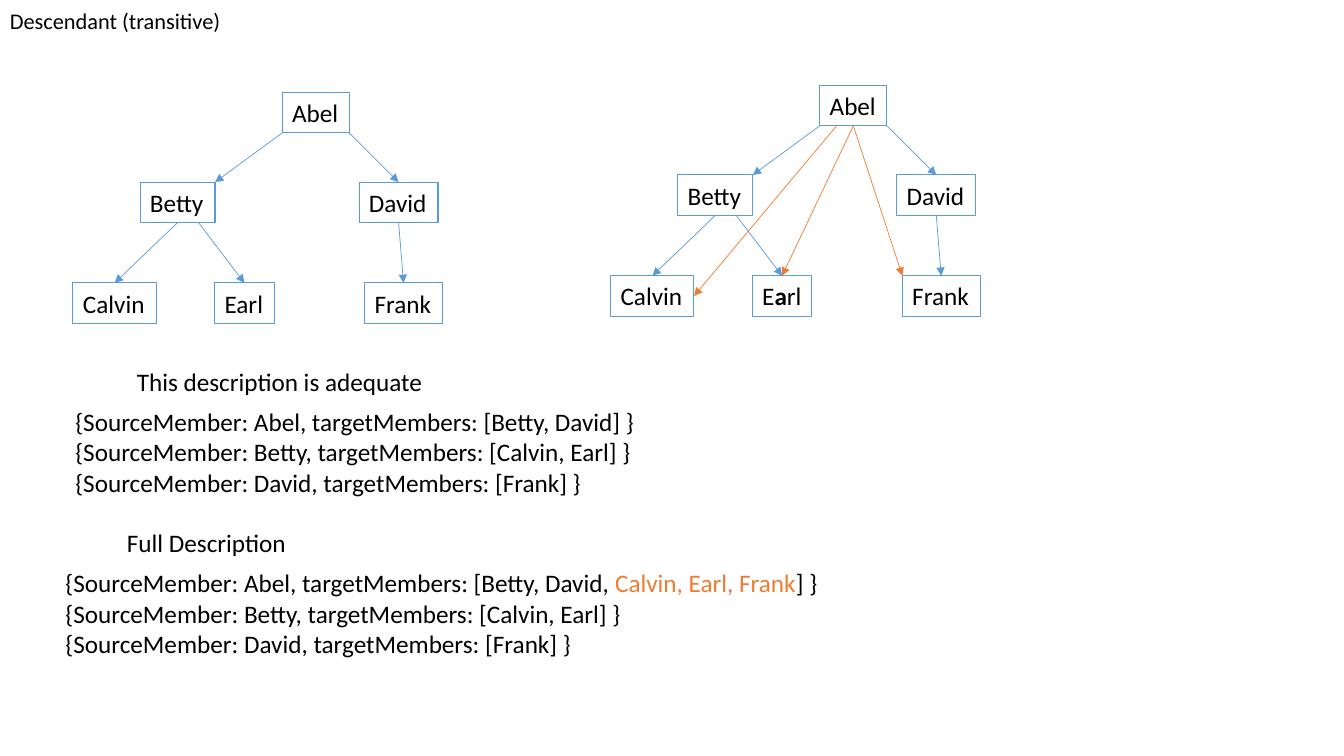
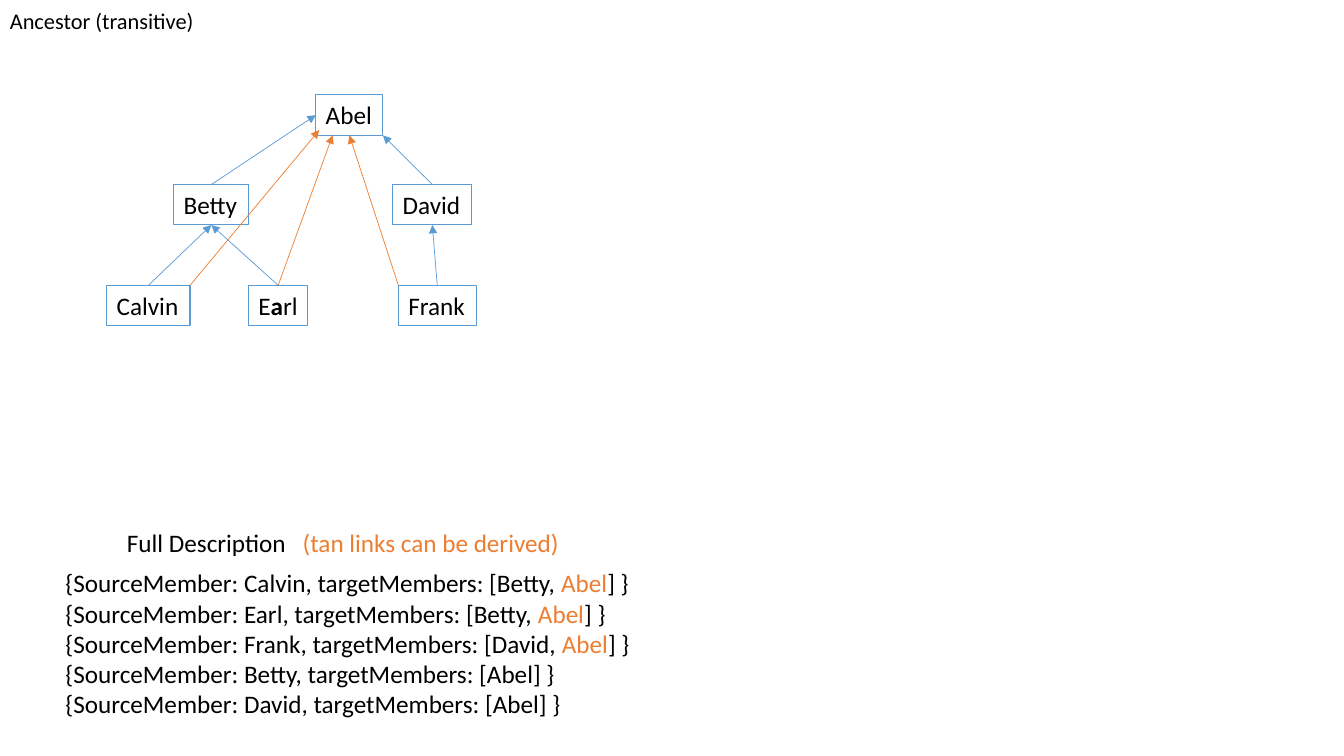
"""Build two slides that compare descendant and ancestor links in a family tree."""
from dataclasses import dataclass

from lxml import etree
from pptx import Presentation
from pptx import util as u
from pptx.dml.color import RGBColor
from pptx.enum import shapes, text
from pptx.oxml.ns import qn


@dataclass(frozen=True)
class Theme:
    font: str = "Calibri"
    ink: RGBColor = RGBColor(0x00, 0x00, 0x00)
    direct: RGBColor = RGBColor(0x5B, 0x9B, 0xD5)
    derived: RGBColor = RGBColor(0xED, 0x7D, 0x31)
    title_size: int = 16
    body_size: int = 18
    border: float = 0.75
    link: float = 0.5


TOP, LEFT, BOTTOM, RIGHT = (0.5, 0), (0, 0.5), (0.5, 1), (1, 0.5)
TOP_LEFT, TOP_RIGHT, BOTTOM_LEFT, BOTTOM_RIGHT = (0, 0), (1, 0), (0, 1), (1, 1)
SITES = {TOP: 0, LEFT: 1, BOTTOM: 2, RIGHT: 3}

ROW_HEIGHT = 1.02
LINE_HEIGHT = 0.76
PARENTS, CHILDREN = 2.26, 4.8
FAMILY = {
    "Abel": (5.27, 0, 1.69),
    "Betty": (1.69, PARENTS, 1.89),
    "Calvin": (0, CHILDREN, 2.1),
    "David": (7.21, PARENTS, 1.99),
    "Earl": (3.57, CHILDREN, 1.5),
    "Frank": (7.35, CHILDREN, 1.96),
}
BOLD_EARL = {"Earl": ("E", "a", "rl")}

DESCENDANT_LINKS = [
    ("Abel", BOTTOM_LEFT, "Betty", TOP_RIGHT),
    ("Abel", BOTTOM_RIGHT, "David", TOP),
    ("Betty", BOTTOM, "Calvin", TOP),
    ("Betty", (0.78, 1), "Earl", TOP),
    ("David", BOTTOM, "Frank", TOP),
]
DERIVED_DESCENDANTS = [
    ("Abel", (0.25, 1), "Calvin", RIGHT),
    ("Abel", BOTTOM, "Earl", TOP),
    ("Abel", BOTTOM, "Frank", TOP_LEFT),
]
ANCESTOR_LINKS = [
    ("Calvin", TOP, "Betty", BOTTOM),
    ("Earl", TOP, "Betty", BOTTOM),
    ("Frank", TOP, "David", BOTTOM),
    ("David", TOP, "Abel", BOTTOM_RIGHT),
    ("Betty", TOP, "Abel", LEFT),
]
DERIVED_ANCESTORS = [
    ("Calvin", TOP_RIGHT, "Abel", (0.05, 0.87)),
    ("Earl", TOP, "Abel", (0.25, 1)),
    ("Frank", TOP_LEFT, "Abel", BOTTOM),
]

LOWER_GENERATION = [("Betty", "Calvin, Earl"), ("David", "Frank")]
ADEQUATE = [("Abel", "Betty, David"), *LOWER_GENERATION]
FULL_DESCENDANTS = [("Abel", "Betty, David", "Calvin, Earl, Frank"), *LOWER_GENERATION]
FULL_ANCESTORS = [
    ("Calvin", "Betty", "Abel"),
    ("Earl", "Betty", "Abel"),
    ("Frank", "David", "Abel"),
    ("Betty", "Abel"),
    ("David", "Abel"),
]


def record(source, direct, derived=None):
    opening = f"{{SourceMember: {source}, targetMembers: [{direct}"
    return (f"{opening}, ", derived, "] }") if derived else (f"{opening}] }}",)


class Deck:
    def __init__(self, theme):
        self.theme = theme
        self.prs = Presentation()
        self.prs.slide_width, self.prs.slide_height = u.Cm(33.87), u.Cm(19.05)
        self.slide = None

    def add_slide(self, title):
        self.slide = self.prs.slides.add_slide(self.prs.slide_layouts[6])
        frame = self.slide.shapes.add_textbox(0, 0, u.Cm(29.21), u.Cm(1.12)).text_frame
        self.set_lines(frame, [(title,)], size=self.theme.title_size)
        frame.word_wrap = True
        frame.auto_size = text.MSO_AUTO_SIZE.NONE
        frame.vertical_anchor = text.MSO_ANCHOR.MIDDLE
        frame.paragraphs[0].line_spacing = 0.9

    def set_lines(self, frame, lines, size=None, color=None, accent=None, bold_accent=False):
        frame.word_wrap = False
        frame.auto_size = text.MSO_AUTO_SIZE.SHAPE_TO_FIT_TEXT
        frame.vertical_anchor = text.MSO_ANCHOR.TOP
        color = color or self.theme.ink
        for row, pieces in enumerate(lines):
            paragraph = frame.add_paragraph() if row else frame.paragraphs[0]
            paragraph.alignment = text.PP_ALIGN.LEFT
            paragraph.text = pieces[0]
            for piece in pieces[1:]:
                paragraph.add_run().text = piece
            for index, run in enumerate(paragraph.runs):
                accented = index % 2 == 1
                run.font.name = self.theme.font
                run.font.size = u.Pt(size or self.theme.body_size)
                run.font.bold = accented and bold_accent
                run.font.color.rgb = accent if accented and accent else color

    def label(self, left, top, width, lines, **style):
        height = LINE_HEIGHT * len(lines) + 0.26
        box = self.slide.shapes.add_textbox(u.Cm(left), u.Cm(top), u.Cm(width), u.Cm(height))
        self.set_lines(box.text_frame, lines, **style)

    def person(self, left, top, width, pieces):
        box = self.slide.shapes.add_shape(
            shapes.MSO_SHAPE.RECTANGLE, u.Cm(left), u.Cm(top), u.Cm(width), u.Cm(ROW_HEIGHT))
        box.shadow.inherit = False
        box.fill.background()
        box.line.color.rgb = self.theme.direct
        box.line.width = u.Pt(self.theme.border)
        self.set_lines(box.text_frame, [pieces], bold_accent=True)
        return box

    def arrow(self, source, start, target, end, color):
        points = [round(value) for box, (x, y) in ((source, start), (target, end))
                  for value in (box.left + x * box.width, box.top + y * box.height)]
        link = self.slide.shapes.add_connector(shapes.MSO_CONNECTOR.STRAIGHT, *points)
        if start in SITES:
            link.begin_connect(source, SITES[start])
        if end in SITES:
            link.end_connect(target, SITES[end])
        link.line.color.rgb = color
        link.line.width = u.Pt(self.theme.link)
        properties = link.element.spPr
        etree.SubElement(properties.find(qn("a:ln")), qn("a:tailEnd"), type="triangle")
        etree.SubElement(properties, qn("a:effectLst"))

    def tree(self, left, top, direct, derived=(), spelling=None):
        spelling = spelling or {}
        people = {
            name: self.person(left + x, top + y, width, spelling.get(name, (name,)))
            for name, (x, y, width) in FAMILY.items()
        }
        for links, color in ((direct, self.theme.direct), (derived, self.theme.derived)):
            for source, start, target, end in links:
                self.arrow(people[source], start, people[target], end, color)

    def description(self, left, top, width, heading, heading_width, records):
        self.label(left + 1.55, top, heading_width, [(heading,)])
        self.label(left, top + 1.02, width, [record(*entry) for entry in records],
                   accent=self.theme.derived)


def main():
    deck = Deck(Theme())

    deck.add_slide("Descendant (transitive)")
    deck.tree(1.84, 2.33, DESCENDANT_LINKS)
    deck.tree(15.39, 2.15, DESCENDANT_LINKS, DERIVED_DESCENDANTS, BOLD_EARL)
    deck.description(1.65, 9.1, 14.76, "This description is adequate", 7.8, ADEQUATE)
    deck.description(1.4, 13.16, 19.69, "Full Description", 4.57, FULL_DESCENDANTS)

    deck.add_slide("Ancestor (transitive)")
    deck.tree(2.69, 2.39, ANCESTOR_LINKS, DERIVED_ANCESTORS, BOLD_EARL)
    deck.description(1.4, 13.16, 14.88, "Full Description", 4.57, FULL_ANCESTORS)
    deck.label(7.38, 13.16, 6.98, [("(tan links can be derived)",)], color=deck.theme.derived)

    deck.prs.save("out.pptx")


if __name__ == "__main__":
    main()
